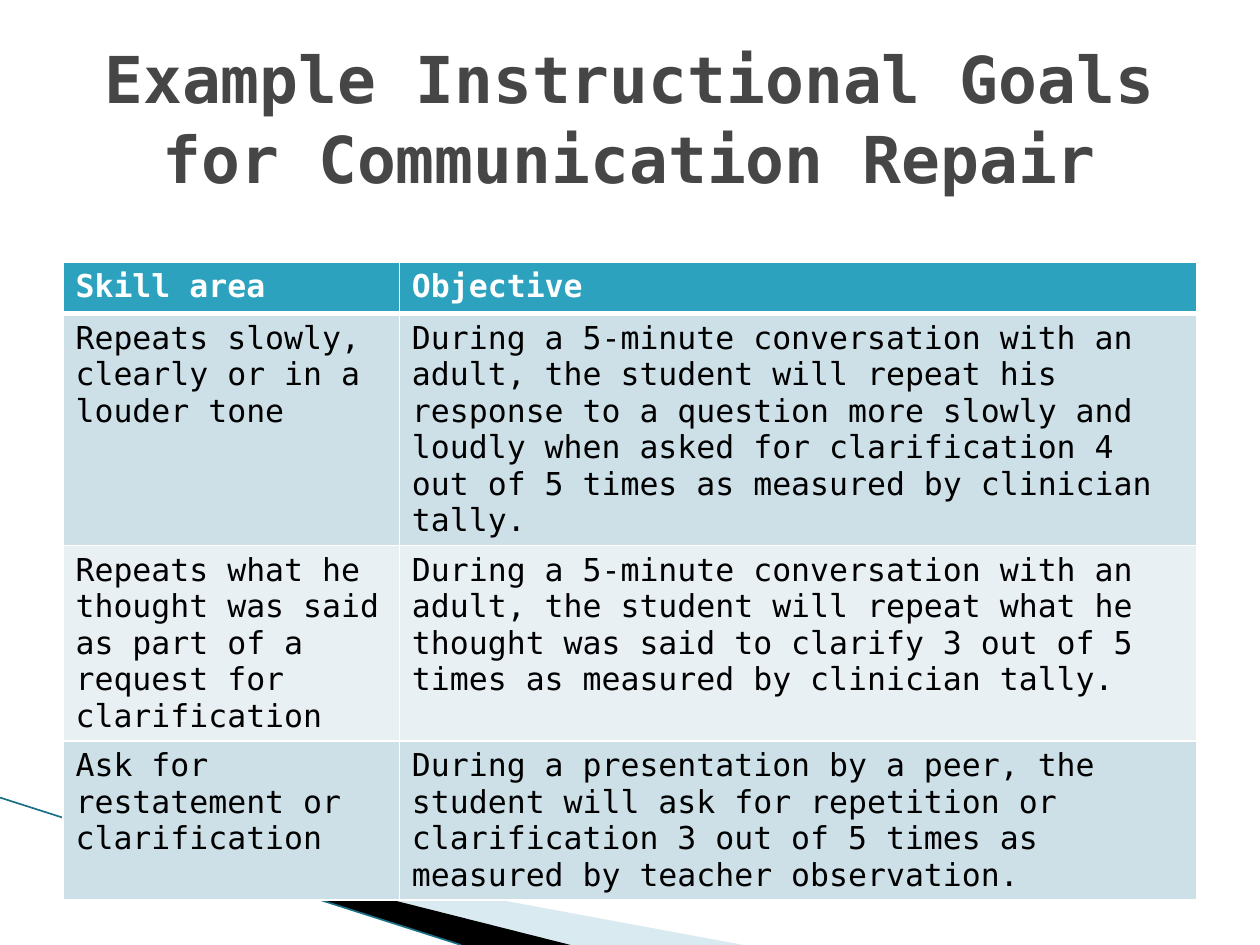
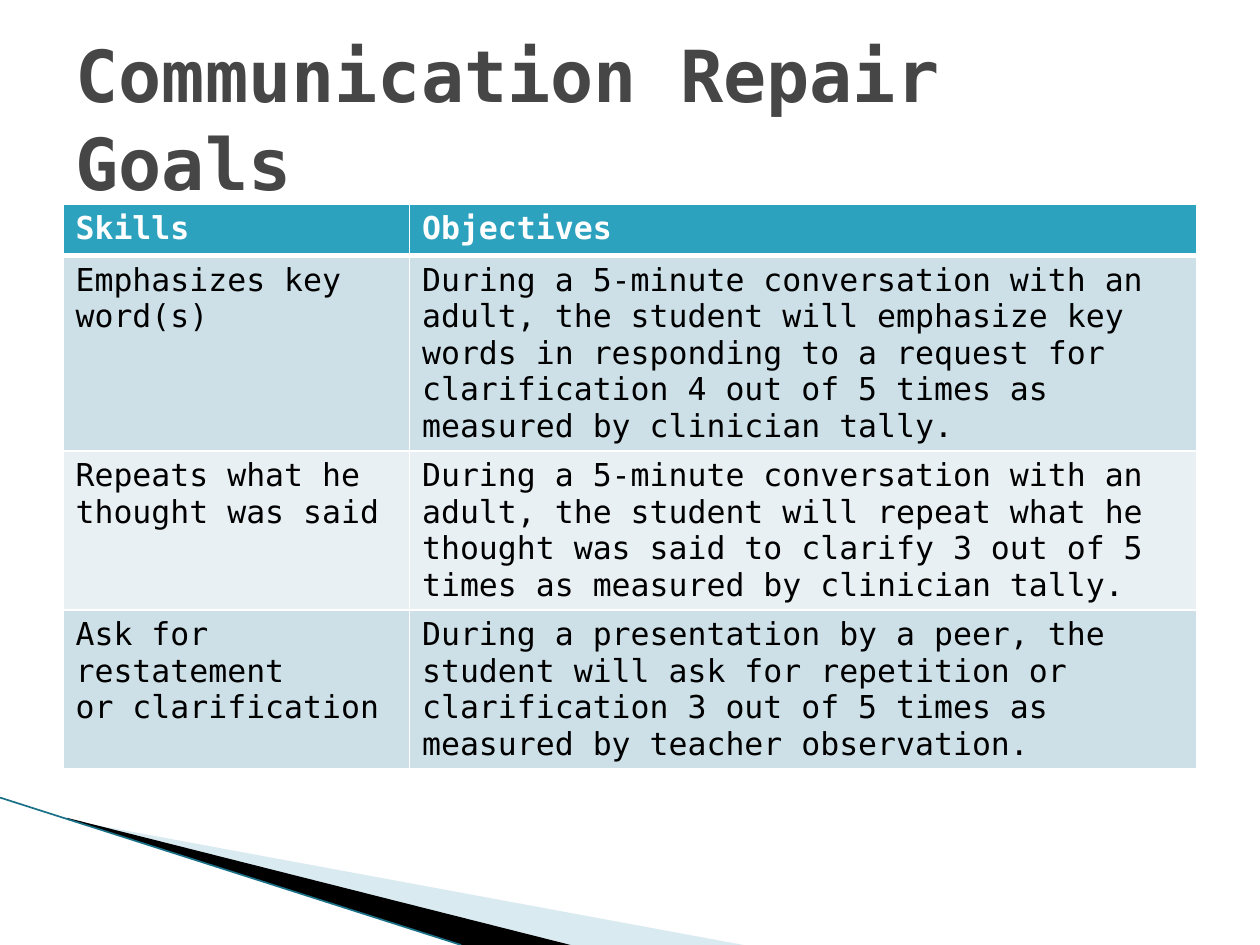
from lxml import etree
from pptx import Presentation
from pptx.dml.color import RGBColor
from pptx.enum.shapes import MSO_CONNECTOR
from pptx.enum.text import MSO_ANCHOR, MSO_AUTO_SIZE, PP_ALIGN
from pptx.oxml.ns import qn
from pptx.util import Pt

PX = 9144  # 100 px to the inch
FONT = "DejaVu Sans Mono"
COLORS = {
    "title": "464646", "text": "000000", "white": "FFFFFF",
    "header": "2DA2BF", "odd": "CDE0E8", "even": "E8F0F4",
    "pale": "A0CBDC", "black": "000000", "edge": "1A7086",
}

# Corner wedges: colour, opacity in percent, outline
WEDGES = [
    ("pale", 40, [(55, 651), (590, 750), (451, 750), (55, 650)]),
    ("black", 100, [(53, 649), (453, 750), (366, 750), (54, 650)]),
]

CLARIFY = ("During a 5-minute conversation with an adult, the student will repeat what he "
           "thought was said to clarify 3 out of 5 times as measured by clinician tally.")
RESTATE = ("During a presentation by a peer, the student will ask for repetition or "
           "clarification 3 out of 5 times as measured by teacher observation.")

SLIDES = [
    {
        "title": "Example Instructional Goals for Communication Repair",
        "size": 36.9, "align": PP_ALIGN.CENTER,
        "top": 208, "cols": [267, 633], "heights": [41, 184, 155, 126],
        "rows": [
            ("Skill area", "Objective"),
            ("Repeats slowly, clearly or in a louder tone",
             "During a 5-minute conversation with an adult, the student will repeat his "
             "response to a question more slowly and loudly when asked for clarification "
             "4 out of 5 times as measured by clinician tally."),
            ("Repeats what he thought was said as part of a request for clarification", CLARIFY),
            ("Ask for restatement or clarification", RESTATE),
        ],
    },
    {
        "title": "Communication Repair Goals",
        "size": 41, "align": PP_ALIGN.LEFT,
        "top": 162, "cols": [275, 625], "heights": [41, 155, 126, 126],
        "rows": [
            ("Skills", "Objectives"),
            ("Emphasizes key\nword(s)",
             "During a 5-minute conversation with an adult, the student will emphasize key "
             "words in responding to a request for clarification 4 out of 5 times as "
             "measured by clinician tally."),
            ("Repeats what he\nthought was said", CLARIFY),
            ("Ask for restatement\nor clarification", RESTATE),
        ],
    },
]


def add_run(p, text, size, color, bold):
    r = p.add_run()
    r.text = text
    r.font.name = FONT
    r.font.size = Pt(size)
    r.font.bold = bold
    r.font.color.rgb = RGBColor.from_string(COLORS[color])


def set_borders(cell, widths):
    tcPr = cell._tc.get_or_add_tcPr()
    for side, width in widths.items():
        ln = etree.SubElement(tcPr, qn("a:ln" + side), w=str(Pt(width)))
        fill = etree.SubElement(ln, qn("a:solidFill"))
        etree.SubElement(fill, qn("a:srgbClr"), val=COLORS["white"])


prs = Presentation()
prs.slide_width, prs.slide_height = 1000 * PX, 750 * PX

for data in SLIDES:
    s = prs.slides.add_slide(prs.slide_layouts[5])

    # Corner decoration
    for color, opacity, points in WEDGES:
        fb = s.shapes.build_freeform(*points[0], scale=PX)
        fb.add_line_segments(points[1:], close=True)
        sp = fb.convert_to_shape()
        sp.shadow.inherit = False
        sp.line.fill.background()
        sp.fill.solid()
        sp.fill.fore_color.rgb = RGBColor.from_string(COLORS[color])
        if opacity < 100:
            clr = sp._element.spPr.find(".//" + qn("a:srgbClr"))
            etree.SubElement(clr, qn("a:alpha"), val=str(opacity * 1000))
    edge = s.shapes.add_connector(MSO_CONNECTOR.STRAIGHT, 0, 633 * PX, 366 * PX, 750 * PX)
    edge.line.width = Pt(0.95)
    edge.line.color.rgb = RGBColor.from_string(COLORS["edge"])
    etree.SubElement(edge._element.spPr, qn("a:effectLst"))

    # Goals table
    rows = data["rows"]
    frame = s.shapes.add_table(len(rows), 2, 50 * PX, data["top"] * PX,
                               900 * PX, sum(data["heights"]) * PX)
    table = frame.table
    for column, width in zip(table.columns, data["cols"]):
        column.width = width * PX
    for i, texts in enumerate(rows):
        table.rows[i].height = data["heights"][i] * PX
        header = i == 0
        fill = "header" if header else ("odd" if i % 2 else "even")
        for j, text in enumerate(texts):
            cell = table.cell(i, j)
            set_borders(cell, {"L": 1, "R": 1, "T": 3 if i == 1 else 1, "B": 3 if header else 1})
            cell.fill.solid()
            cell.fill.fore_color.rgb = RGBColor.from_string(COLORS[fill])
            tf = cell.text_frame
            for k, line in enumerate(text.split("\n")):
                p = tf.add_paragraph() if k else tf.paragraphs[0]
                add_run(p, line, 18, "white" if header else "text", header)

    # Title
    title = s.shapes.title
    title.left, title.top, title.width, title.height = 50 * PX, 30 * PX, 900 * PX, 125 * PX
    tf = title.text_frame
    tf.word_wrap = True
    tf.auto_size = MSO_AUTO_SIZE.NONE
    tf.vertical_anchor = MSO_ANCHOR.MIDDLE
    p = tf.paragraphs[0]
    p.alignment = data["align"]
    p.line_spacing = 1.03
    add_run(p, data["title"], data["size"], "title", True)

prs.save("out.pptx")
